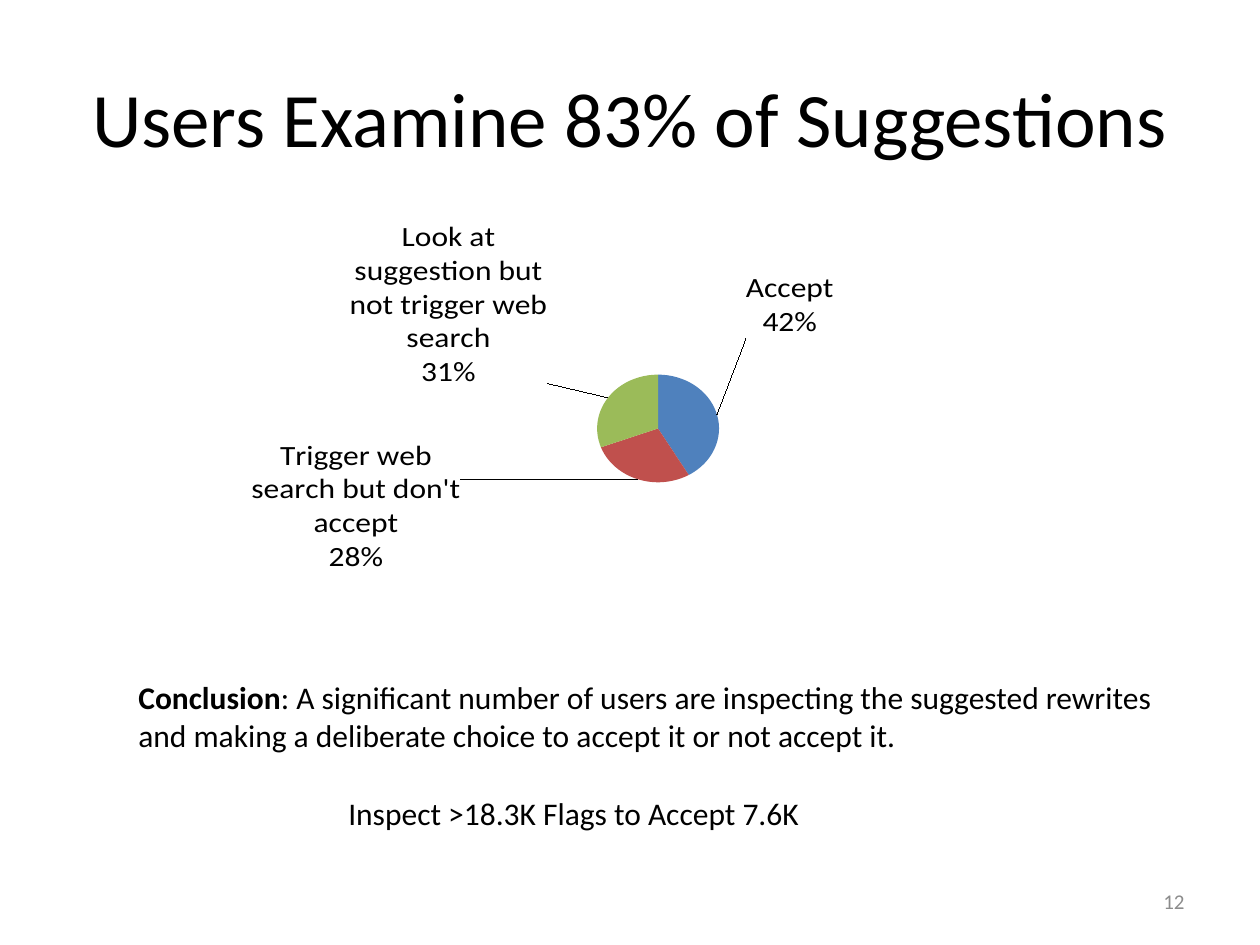
from dataclasses import dataclass

from lxml import etree
from pptx import Presentation
from pptx.chart.data import CategoryChartData
from pptx.dml.color import RGBColor
from pptx.enum.chart import XL_CHART_TYPE, XL_LABEL_POSITION
from pptx.enum.text import MSO_ANCHOR, PP_ALIGN
from pptx.oxml.ns import qn
from pptx.util import Emu, Pt

PIE = XL_CHART_TYPE.PIE
OUTSIDE = XL_LABEL_POSITION.OUTSIDE_END
LEFT, CENTER, RIGHT = PP_ALIGN.LEFT, PP_ALIGN.CENTER, PP_ALIGN.RIGHT
TOP, MIDDLE = MSO_ANCHOR.TOP, MSO_ANCHOR.MIDDLE
TITLE_ONLY = 5
PX_PER_INCH = 126


@dataclass(frozen=True)
class Theme:
    font: str = "Calibri"
    ink: str = "000000"
    muted: str = "8C8C8C"
    accept: str = "4F81BD"
    trigger: str = "C0504D"
    look: str = "9BBB59"
    title: int = 44
    body: int = 18
    small: int = 12


THEME = Theme()


@dataclass(frozen=True)
class Box:
    x: int
    y: int
    w: int
    h: int

    def emu(self) -> tuple[Emu, ...]:
        return tuple(px(v) for v in (self.x, self.y, self.w, self.h))


@dataclass(frozen=True)
class Slice:
    category: str
    value: int
    color: str
    offset: tuple[float, float]  # label shift, as a share of the chart


@dataclass(frozen=True)
class Note:
    box: Box
    text: str
    lead: str = ""  # bold opening words
    size: int = THEME.body
    color: str = THEME.ink
    align: PP_ALIGN = LEFT
    anchor: MSO_ANCHOR = TOP


TITLE_BOX = Box(63, 38, 1134, 157)
CHART_BOX = Box(63, 220, 1092, 400)
PIE_BOX = Box(597, 395, 122, 122)

SLICES = [
    Slice("Accept", 42, THEME.accept, (0.02, -0.21)),
    Slice("Trigger web search but don't accept", 28, THEME.trigger, (-0.16, -0.11)),
    Slice("Look at suggestion but not trigger web search", 31, THEME.look,
          (-0.05, -0.03)),
]

NOTES = [
    Note(Box(903, 876, 294, 50), "12", size=THEME.small, color=THEME.muted,
         align=RIGHT, anchor=MIDDLE),
    Note(Box(126, 672, 1061, 89),
         ": A significant number of users are inspecting the suggested rewrites "
         "and making a deliberate choice to accept it or not accept it.",
         lead="Conclusion"),
    Note(Box(336, 788, 557, 50), "Inspect >18.3K Flags to Accept 7.6K"),
]


def px(n: int) -> Emu:
    return Emu(round(n * 914400 / PX_PER_INCH))


def style(font, size: int, color: str = THEME.ink) -> None:
    font.name, font.size = THEME.font, Pt(size)
    font.color.rgb = RGBColor.from_string(color)


def add_title(slide, text: str) -> None:
    sp = slide.shapes.title
    sp.left, sp.top, sp.width, sp.height = TITLE_BOX.emu()
    tf = sp.text_frame
    tf.text, tf.vertical_anchor = text, MIDDLE
    p = tf.paragraphs[0]
    p.alignment = CENTER
    style(p.font, THEME.title)


def add_note(slide, note: Note) -> None:
    tf = slide.shapes.add_textbox(*note.box.emu()).text_frame
    tf.word_wrap, tf.vertical_anchor = True, note.anchor
    p = tf.paragraphs[0]
    p.alignment = note.align
    style(p.font, note.size, note.color)
    if note.lead:
        r = p.add_run()
        r.text, r.font.bold = note.lead, True
    p.add_run().text = note.text


def make_layout(**values: float | str):
    layout = etree.Element(qn("c:layout"))
    manual = etree.SubElement(layout, qn("c:manualLayout"))
    for name, value in values.items():
        etree.SubElement(manual, qn(f"c:{name}")).set("val", str(value))
    return layout


def place_pie(chart) -> None:
    area = chart._chartSpace.find(".//" + qn("c:plotArea"))
    for old in area.findall(qn("c:layout")):
        area.remove(old)
    area.insert(0, make_layout(
        layoutTarget="inner", xMode="edge", yMode="edge",
        x=round((PIE_BOX.x - CHART_BOX.x) / CHART_BOX.w, 3),
        y=round((PIE_BOX.y - CHART_BOX.y) / CHART_BOX.h, 3),
        w=round(PIE_BOX.w / CHART_BOX.w, 3),
        h=round(PIE_BOX.h / CHART_BOX.h, 3)))


def add_pie(slide) -> None:
    data = CategoryChartData()
    data.categories = [s.category for s in SLICES]
    data.add_series("Series 1", [s.value for s in SLICES])
    chart = slide.shapes.add_chart(PIE, *CHART_BOX.emu(), data).chart
    chart.has_legend = chart.has_title = False
    chart.plots[0].vary_by_categories = True
    style(chart.font, THEME.body)
    place_pie(chart)

    series = chart.plots[0].series[0]
    labels = series.data_labels
    labels.show_category_name = labels.show_percentage = True
    labels.show_value = False
    for i, item in enumerate(SLICES):
        point = series.points[i]
        point.format.fill.solid()
        point.format.fill.fore_color.rgb = RGBColor.from_string(item.color)
        point.data_label.position = OUTSIDE
        style(point.data_label.font, THEME.body)

    # Label offsets, contents, wrapping and leader lines
    root = chart._chartSpace
    for node, item in zip(root.iter(qn("c:dLbl")), SLICES):
        x, y = item.offset
        node.find(qn("c:idx")).addnext(make_layout(x=x, y=y))
        node.find(".//" + qn("a:bodyPr")).set("wrap", "square")
        for name, on in (("showVal", 0), ("showCatName", 1), ("showPercent", 1)):
            node.find(qn(f"c:{name}")).set("val", str(on))
        separator = etree.Element(qn("c:separator"))
        separator.text = "\n"
        node.find(qn("c:showBubbleSize")).addnext(separator)
    for node in root.iter(qn("c:showLeaderLines")):
        node.set("val", "1")


def main() -> None:
    prs = Presentation()
    prs.slide_width, prs.slide_height = px(1260), px(945)
    slide = prs.slides.add_slide(prs.slide_layouts[TITLE_ONLY])
    add_title(slide, "Users Examine 83% of Suggestions")
    add_pie(slide)
    for note in NOTES:
        add_note(slide, note)
    prs.save("out.pptx")


if __name__ == "__main__":
    main()
